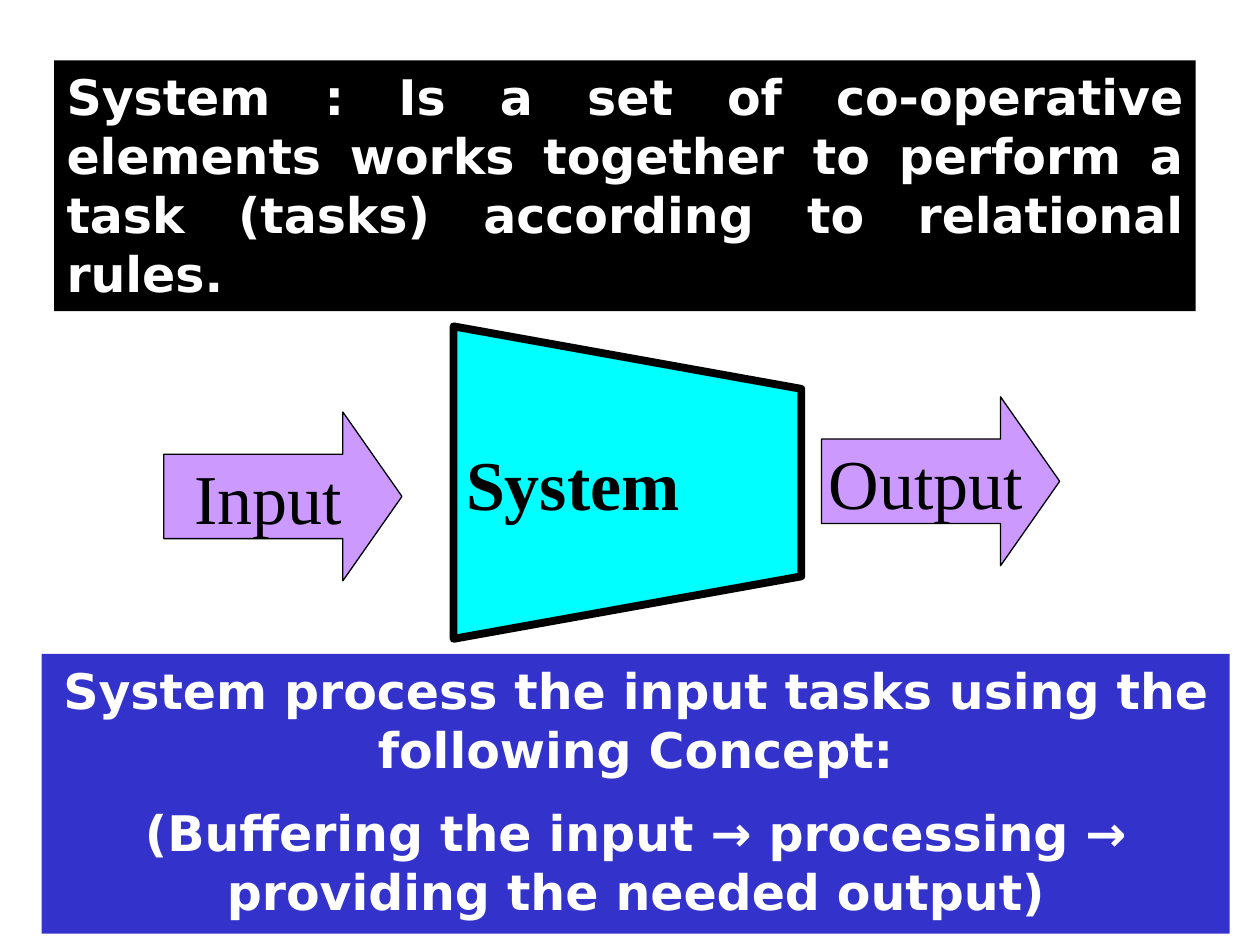
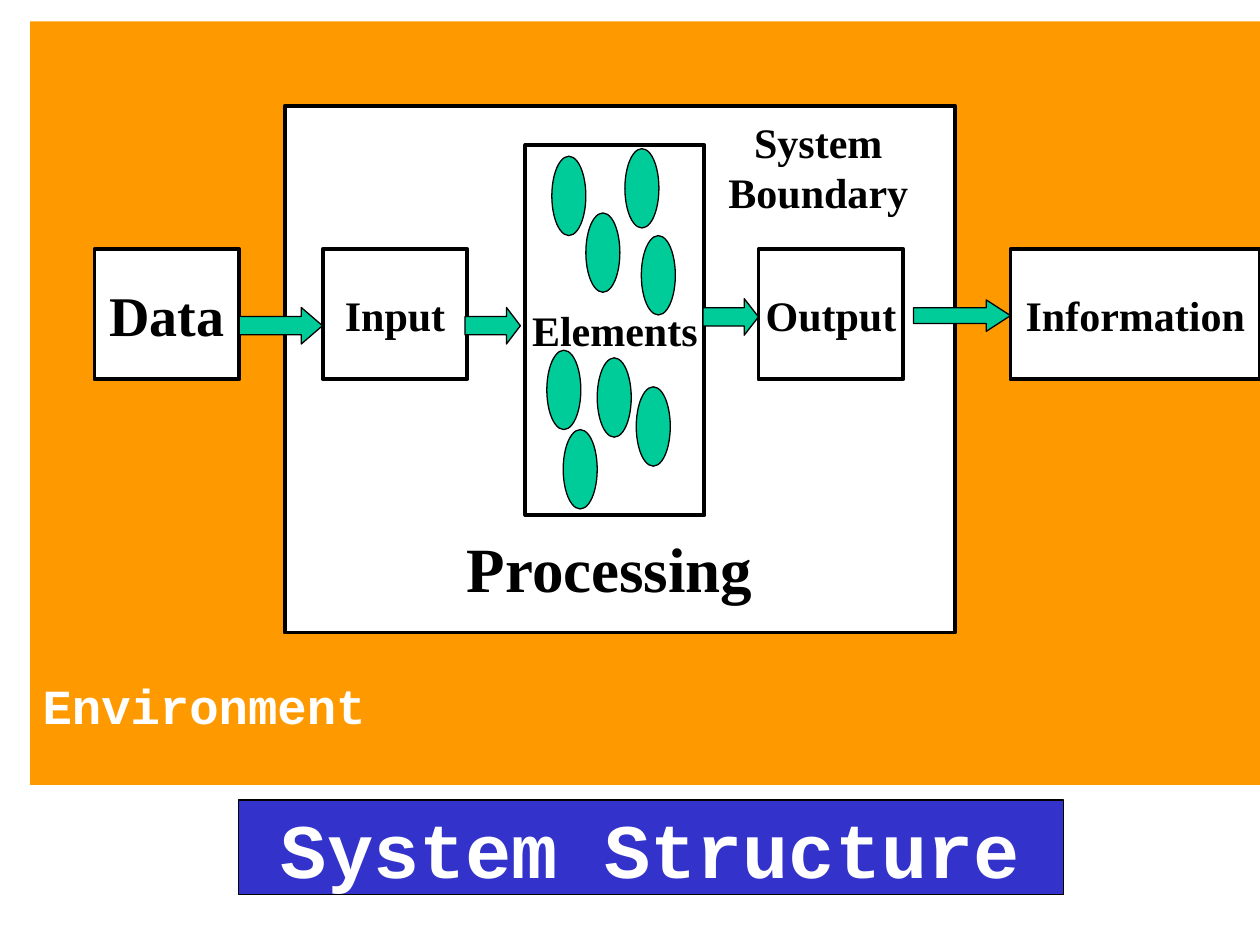
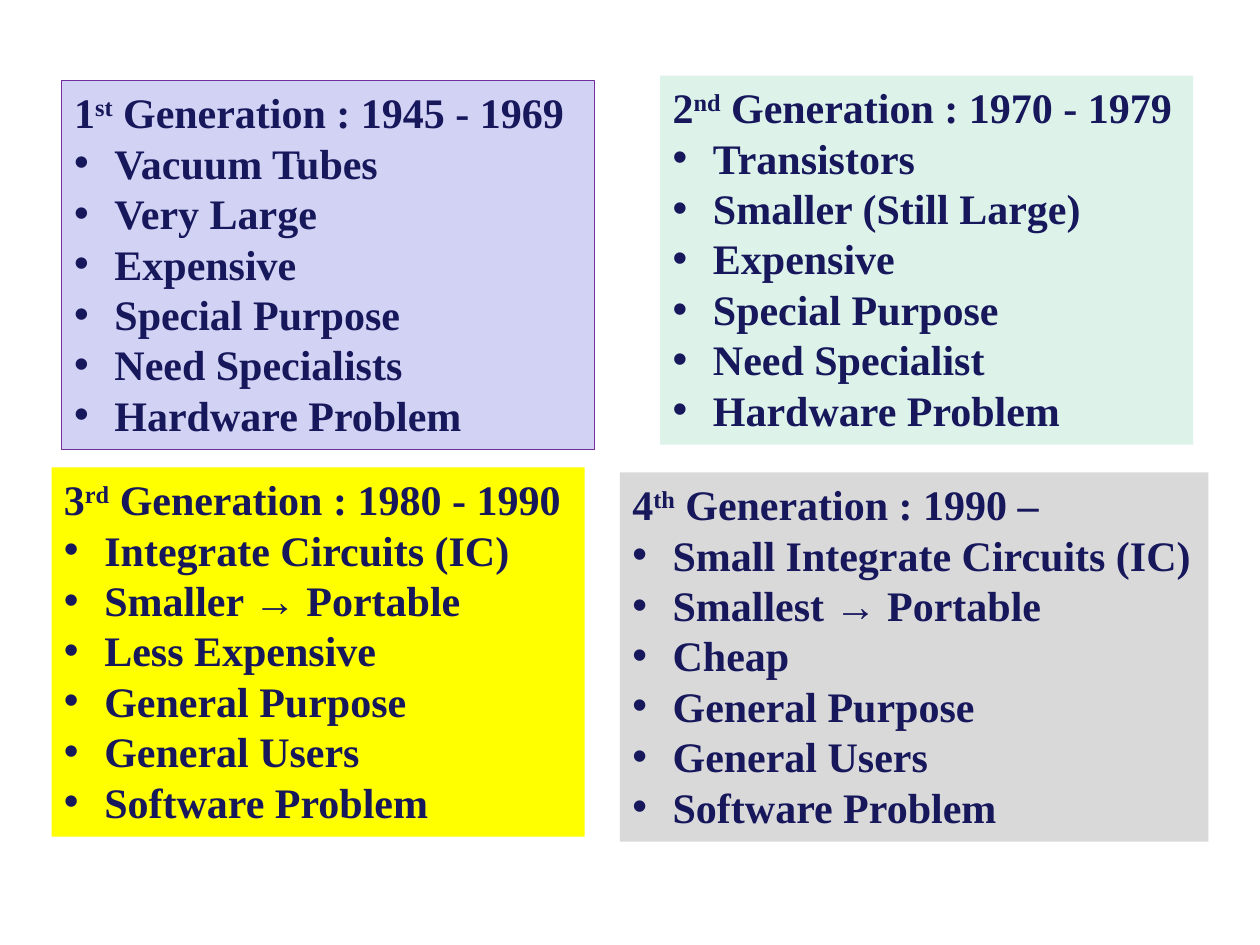
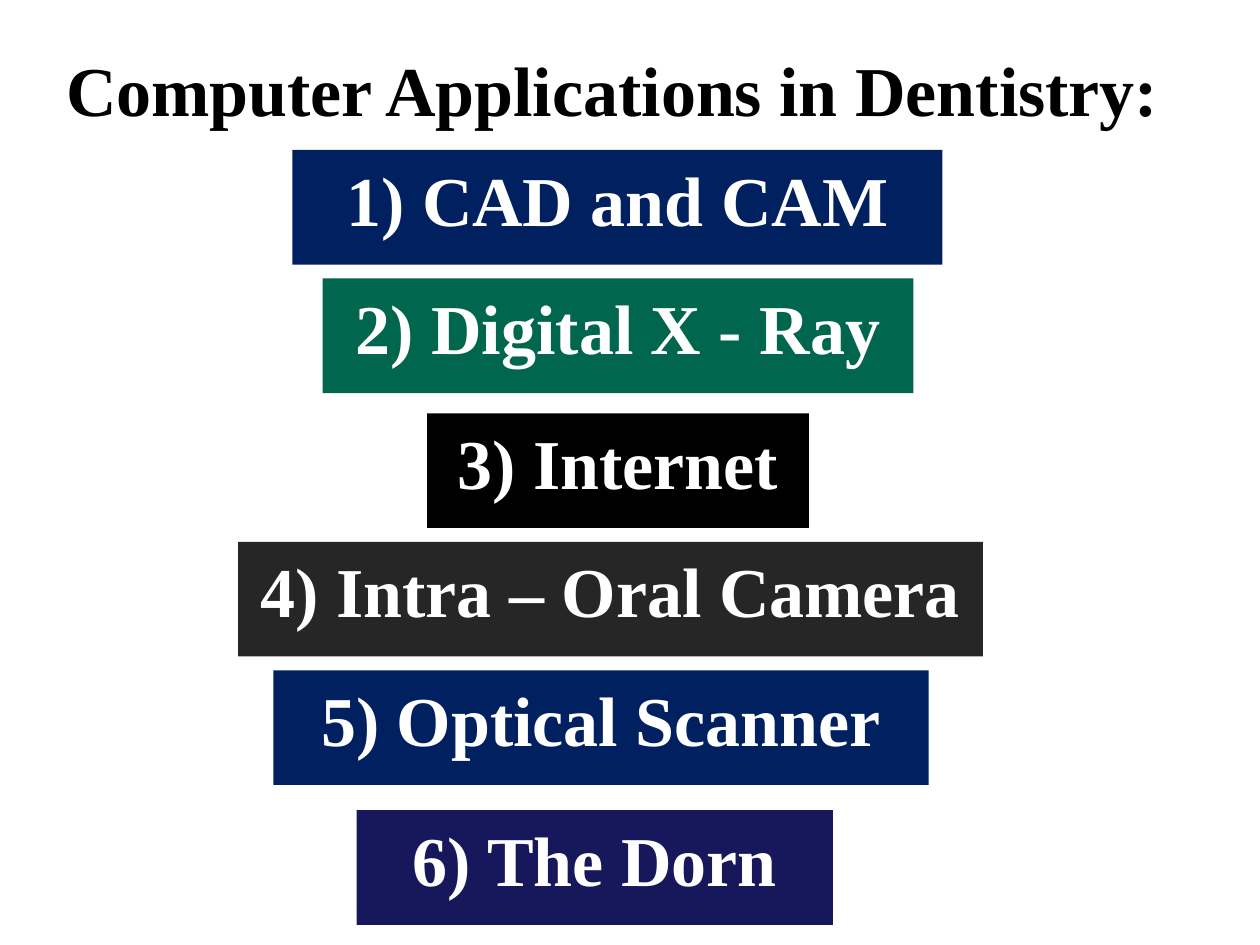
"""Build four slides on systems, computer generations and dentistry applications."""
from lxml import etree
from pptx import Presentation
from pptx import util as u
from pptx.dml.color import RGBColor
from pptx.enum import shapes, text
from pptx.oxml import ns

COLOURS = {
    "black": "000000", "white": "FFFFFF", "cyan": "00FFFF", "lilac": "CC99FF",
    "blue": "3333CC", "orange": "FF9900", "green": "00CC99", "purple": "7030A0",
    "lavender": "D2D2F4", "mint": "DDF3EA", "yellow": "FFFF00", "grey": "D9D9D9",
    "indigo": "17175C", "navy": "002060", "pine": "00664D", "charcoal": "262626",
}
SERIF, SANS, MONO = "Times New Roman", "DejaVu Sans", "Courier New"
KIND = shapes.MSO_SHAPE
ALIGN, ANCHOR = text.PP_ALIGN, text.MSO_ANCHOR

deck = Presentation()
deck.slide_width, deck.slide_height = u.Inches(10), u.Inches(7.5)
COLUMN, ROW = deck.slide_width / 100, deck.slide_height / 75
TITLE_ONLY, BLANK = deck.slide_layouts[5], deck.slide_layouts[6]


def block(slide, box, fill=None, line=None, width=0.75, kind=KIND.RECTANGLE, shape=None):
    """Place a shape, or move a given one, on the 100 by 75 grid and paint it."""
    left, top, wide, high = box
    place = [round(n) for n in (left * COLUMN, top * ROW, wide * COLUMN, high * ROW)]
    if shape is None:
        shape = slide.shapes.add_shape(kind, *place)
        shape.shadow.inherit = False
    else:
        shape.left, shape.top, shape.width, shape.height = place
    if fill:
        shape.fill.solid()
        shape.fill.fore_color.rgb = RGBColor.from_string(COLOURS[fill])
    else:
        shape.fill.background()
    if line:
        shape.line.color.rgb = RGBColor.from_string(COLOURS[line])
        shape.line.width = u.Pt(width)
    else:
        shape.line.fill.background()
    return shape


def write(shape, words, size=24, font=SERIF, colour="black", bold=True, align=ALIGN.CENTER,
          anchor=ANCHOR.MIDDLE, wrap=False, gap=0, bullets=False):
    """Write one paragraph per line; text between carets is raised."""
    frame = shape.text_frame
    frame.auto_size = text.MSO_AUTO_SIZE.NONE
    frame.word_wrap, frame.vertical_anchor = wrap, anchor
    frame.margin_left = frame.margin_right = u.Inches(0.1)
    frame.margin_top = frame.margin_bottom = u.Inches(0.05)
    for number, line in enumerate(words.split("\n")):
        paragraph = frame.add_paragraph() if number else frame.paragraphs[0]
        paragraph.alignment = align
        paragraph.space_before = u.Pt(gap if number else 0)
        if bullets and number:
            properties = paragraph._p.get_or_add_pPr()
            properties.set("marL", str(u.Inches(0.32)))
            properties.set("indent", str(-u.Inches(0.32)))
            etree.SubElement(properties, ns.qn("a:buFont"), typeface="Arial")
            etree.SubElement(properties, ns.qn("a:buChar"), char="•")
        for part, piece in enumerate(line.split("^")):
            run = paragraph.add_run()
            run.text = piece
            run.font.size, run.font.name, run.font.bold = u.Pt(size), font, bold
            run.font.color.rgb = RGBColor.from_string(COLOURS[colour])
            if part % 2:
                run._r.get_or_add_rPr().set("baseline", "30000")


concept = deck.slides.add_slide(BLANK)
banner = dict(size=28, font=SANS, colour="white", anchor=ANCHOR.TOP, wrap=True)
definition = block(concept, (4.3, 4.8, 90.6, 19.9), "black")
write(definition, "System : Is a set of co-operative elements works together to perform "
      "a task (tasks) according to relational rules.", align=ALIGN.JUSTIFY, **banner)
system = block(concept, (37.4, 24.5, 24.8, 27.6), "cyan", "black", 4.5,
               KIND.FLOWCHART_MANUAL_OPERATION)
system.rotation = 270
write(system, "System", size=40)
system.text_frame._txBody.bodyPr.set("vert", "eaVert")
for label, left, top in (("Input", 13, 32.7), ("Output", 65.2, 31.5)):
    flow = block(concept, (left, top, 18.9, 13.4), "lilac", "black", kind=KIND.RIGHT_ARROW)
    flow.adjustments[1] = 0.35
    write(flow, label, size=40, bold=False)
process = block(concept, (3.3, 51.9, 94.3, 22.2), "blue")
write(process, "System process the input tasks using the following Concept:\n"
      "(Buffering the input → processing → providing the needed output)", gap=14, **banner)

structure = deck.slides.add_slide(TITLE_ONLY)
heading = block(structure, (18.9, 63.5, 65.5, 7.5), "blue", "black",
                shape=structure.shapes.title)
write(heading, "System Structure", size=44, font=MONO, colour="white")
environment = block(structure, (2.4, 1.7, 97.6, 60.6), "orange")
write(environment, "Environment", size=28, font=MONO, colour="white",
      align=ALIGN.LEFT, anchor=ANCHOR.BOTTOM)
environment.text_frame.margin_bottom = u.Inches(0.4)
block(structure, (22.6, 8.4, 53.2, 41.8), "white", "black", 2.25)
STAGE_TOP, STAGE_HEIGHT = 19.8, 10.3
for label, left, wide, size in (("Input", 25.6, 11.5, 24), ("Output", 60.2, 11.5, 24),
                                ("Data", 7.5, 11.5, 32), ("Information", 80.2, 19.8, 24)):
    stage = block(structure, (left, STAGE_TOP, wide, STAGE_HEIGHT), "white", "black", 2.25)
    write(stage, label, size=size)
elements = block(structure, (41.7, 11.5, 14.2, 29.4), None, "black", 2.25)
write(elements, "Elements")
for left, top in ((49.6, 11.8), (46.5, 16.9), (50.9, 18.7), (43.4, 27.8),
                  (50.5, 30.7), (47.4, 28.4), (44.7, 34.1), (43.8, 12.4)):
    block(structure, (left, top, 2.7, 6.3), "green", "black", kind=KIND.OVAL)
for words, size, box in (("Processing", 36, (37, 42.7, 22.8, 4.6)),
                         ("System\nBoundary", 24, (54.3, 9.5, 21.3, 7.5))):
    write(block(structure, box), words, size=size)
for left, top, wide, high, head in ((19, 24.4, 6.6, 2.9, 0.58), (36.9, 24.4, 4.4, 2.9, 0.38),
                                    (55.8, 23.7, 4.4, 2.9, 0.39), (72.5, 23.8, 7.7, 2.5, 0.77)):
    step = block(structure, (left, top, wide, high), "green", "black", kind=KIND.RIGHT_ARROW)
    step.adjustments[1] = head

history = deck.slides.add_slide(BLANK)
generations = (
    (4.9, 6.4, 42.3, "lavender", "purple",
     "1^st^ Generation : 1945 - 1969\nVacuum Tubes\nVery Large\nExpensive\n"
     "Special Purpose\nNeed Specialists\nHardware Problem"),
    (52.4, 6, 42.3, "mint", None,
     "2^nd^ Generation : 1970 - 1979\nTransistors\nSmaller (Still Large)\nExpensive\n"
     "Special Purpose\nNeed Specialist\nHardware Problem"),
    (4.1, 37.1, 42.3, "yellow", None,
     "3^rd^ Generation : 1980 - 1990\nIntegrate Circuits (IC)\nSmaller → Portable\n"
     "Less Expensive\nGeneral Purpose\nGeneral Users\nSoftware Problem"),
    (49.2, 37.5, 46.7, "grey", None,
     "4^th^ Generation : 1990 –\nSmall Integrate Circuits (IC)\nSmallest → Portable\n"
     "Cheap\nGeneral Purpose\nGeneral Users\nSoftware Problem"),
)
for left, top, wide, fill, line, facts in generations:
    generation = block(history, (left, top, wide, 29.3), fill, line)
    write(generation, facts, colour="indigo", align=ALIGN.JUSTIFY, anchor=ANCHOR.TOP,
          wrap=True, bullets=True)

dentistry = deck.slides.add_slide(TITLE_ONLY)
BAR_HEIGHT = 9.1
heading = block(dentistry, (3.1, 3.2, 91, BAR_HEIGHT), shape=dentistry.shapes.title)
write(heading, "Computer Applications in Dentistry:", size=40, anchor=ANCHOR.TOP, wrap=True)
applications = (
    ("CAD and CAM", 23.2, 11.9, 51.6, "navy"),
    ("Digital X - Ray", 25.6, 22.1, 46.9, "pine"),
    ("Internet", 33.9, 32.8, 30.3, "black"),
    ("Intra – Oral Camera", 18.9, 43, 59.1, "charcoal"),
    ("Optical Scanner", 21.7, 53.2, 52, "navy"),
    ("The Dorn", 28.3, 64.3, 37.8, "indigo"),
)
for number, (name, left, top, wide, fill) in enumerate(applications, 1):
    application = block(dentistry, (left, top, wide, BAR_HEIGHT), fill)
    write(application, f"{number}) {name}", size=40, colour="white",
          anchor=ANCHOR.TOP, wrap=True)

deck.save("out.pptx")
